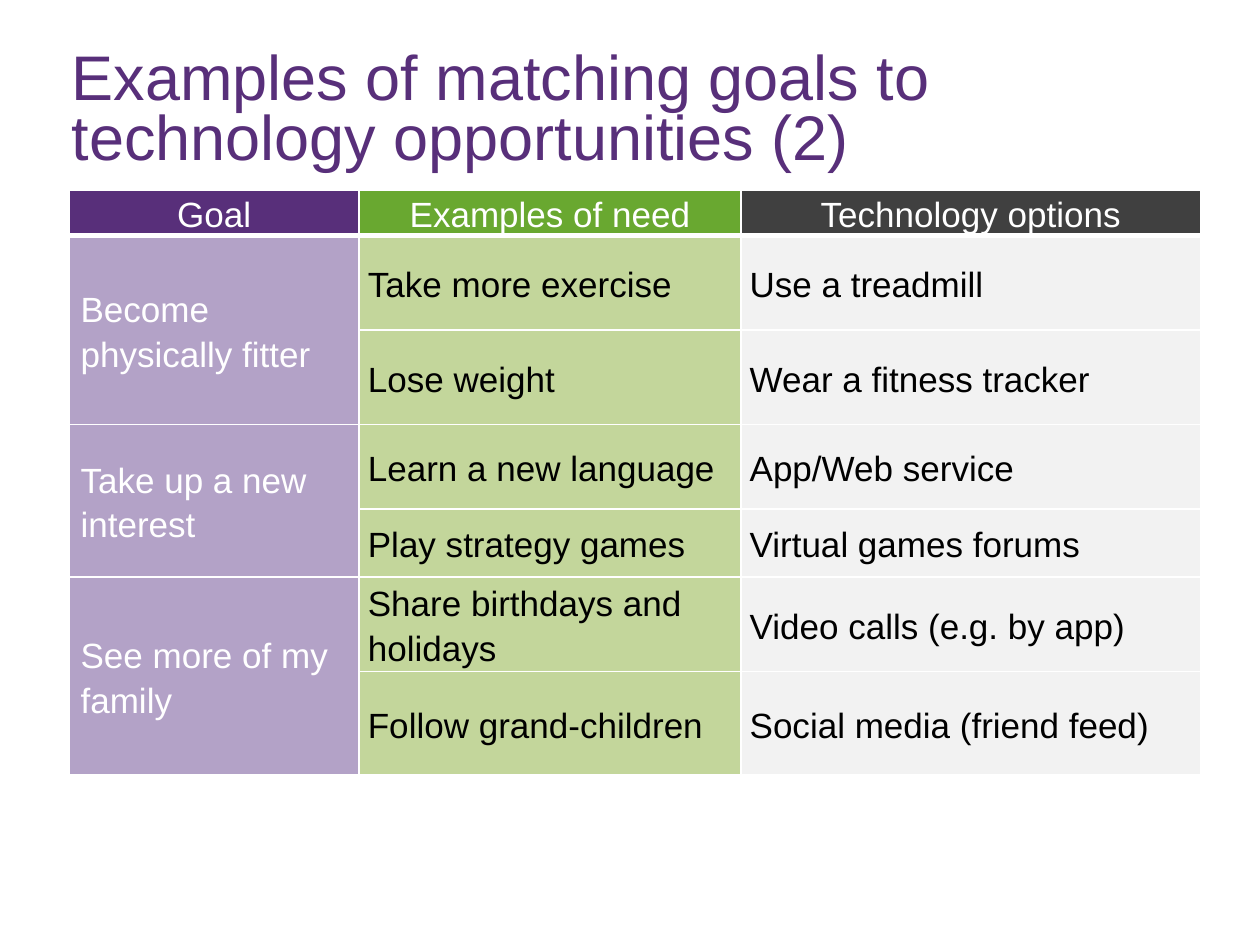
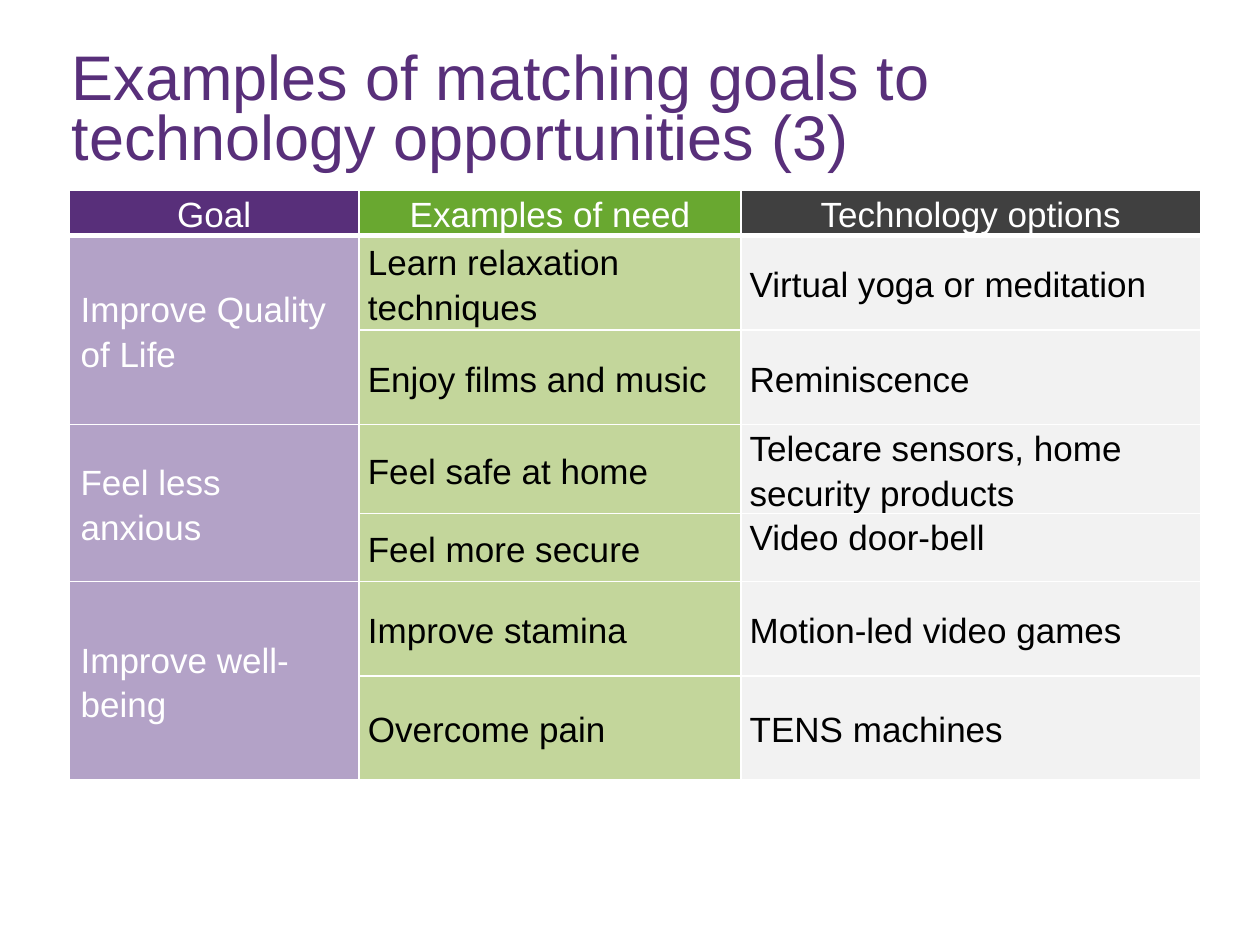
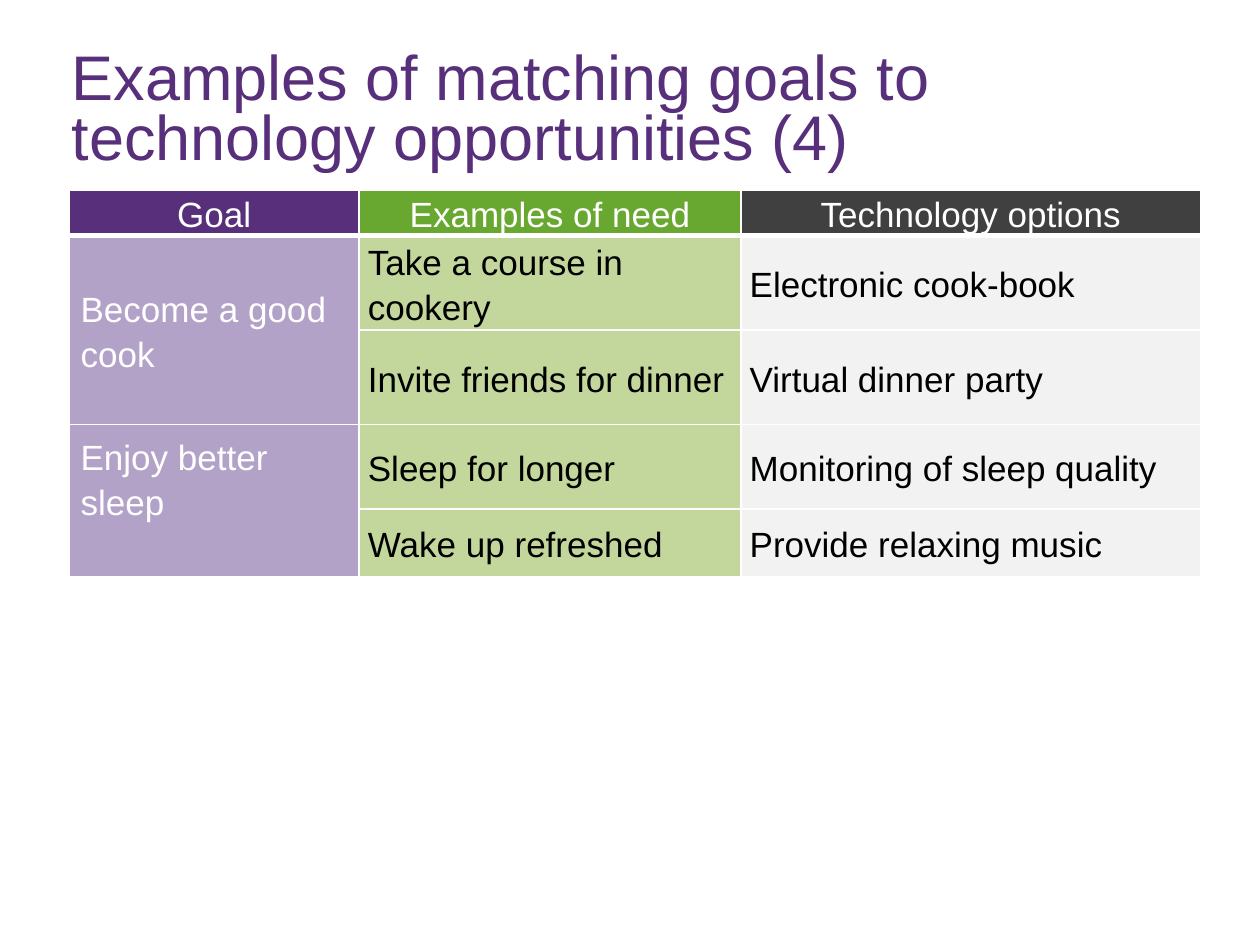
from dataclasses import dataclass
from typing import Any

from lxml import etree
from pptx import Presentation
from pptx import util as u
from pptx.dml import color
from pptx.enum import text
from pptx.oxml import ns

PURPLE, LILAC = "582F7A", "B3A2C7"
WHITE, BLACK = "FFFFFF", "000000"
HEADERS = ["Goal", "Examples of need", "Technology options"]
HEADER_FILLS = [PURPLE, "69A830", "404040"]
BODY_FILLS = [LILAC, "C3D69B", "F2F2F2"]
BODY_INKS = [WHITE, BLACK, BLACK]
COLUMN_WIDTHS = [2.3, 3.03, 3.65]
ROW_HEIGHTS = [0.36, 0.75, 0.75, 0.67, 0.54, 0.75, 0.82]

GOAL_SETS = {
    2: [
        ("Become physically fitter",
         [("Take more exercise", "Use a treadmill"),
          ("Lose weight", "Wear a fitness tracker")]),
        ("Take up a new interest",
         [("Learn a new language", "App/Web service"),
          ("Play strategy games", "Virtual games forums")]),
        ("See more of my family",
         [("Share birthdays and holidays", "Video calls (e.g. by app)"),
          ("Follow grand-children", "Social media (friend feed)")]),
    ],
    3: [
        ("Improve Quality of Life",
         [("Learn relaxation techniques", "Virtual yoga or meditation"),
          ("Enjoy films and music", "Reminiscence")]),
        ("Feel less anxious",
         [("Feel safe at home", "Telecare sensors, home security products"),
          ("Feel more secure", "Video door-bell")]),
        ("Improve well-being",
         [("Improve stamina", "Motion-led video games"),
          ("Overcome pain", "TENS machines")]),
    ],
    4: [
        ("Become a good cook",
         [("Take a course in cookery", "Electronic cook-book"),
          ("Invite friends for dinner", "Virtual dinner party")]),
        ("Enjoy better sleep",
         [("Sleep for longer", "Monitoring of sleep quality"),
          ("Wake up refreshed", "Provide relaxing music")]),
    ],
}


def rgb(hex_color):
    return color.RGBColor.from_string(hex_color)


@dataclass
class Deck:
    """Hold the shared style and the current slide."""

    prs: Any
    slide: Any = None
    font: str = "Arial"

    def add_slide(self):
        self.slide = self.prs.slides.add_slide(self.prs.slide_layouts[5])

    def format(self, paragraph, size, ink, spacing, align):
        paragraph.line_spacing = spacing
        paragraph.alignment = align
        for run in paragraph.runs:
            run.font.name = self.font
            run.font.size = u.Pt(size)
            run.font.bold = False
            run.font.color.rgb = rgb(ink)

    def title(self, wording):
        heading = self.slide.shapes.title
        heading.left, heading.top = u.Inches(0.47), u.Inches(0.4)
        heading.width, heading.height = u.Inches(9.06), u.Inches(1.1)
        frame = heading.text_frame
        frame.text = wording
        frame.auto_size = text.MSO_AUTO_SIZE.NONE
        frame.vertical_anchor = text.MSO_ANCHOR.MIDDLE
        frame.margin_bottom = u.Inches(0.17)
        self.format(frame.paragraphs[0], 36, PURPLE, 0.8, text.PP_ALIGN.LEFT)

    def borders(self, cell, top, bottom):
        properties = cell._tc.get_or_add_tcPr()
        for side, width in zip("LRTB", (1, 1, top, bottom)):
            line = etree.SubElement(properties, ns.qn(f"a:ln{side}"), w=str(u.Pt(width)))
            fill = etree.SubElement(line, ns.qn("a:solidFill"))
            etree.SubElement(fill, ns.qn("a:srgbClr"), val=WHITE)

    def cell(self, cell, wording, fill, ink, row):
        is_header = row == 0
        self.borders(cell, 3 if row == 1 else 1, 3 if is_header else 1)
        cell.fill.solid()
        cell.fill.fore_color.rgb = rgb(fill)
        cell.margin_left = cell.margin_right = u.Inches(0.07)
        cell.margin_top = cell.margin_bottom = 0
        cell.vertical_anchor = text.MSO_ANCHOR.TOP if is_header else text.MSO_ANCHOR.MIDDLE
        cell.text = wording
        align = text.PP_ALIGN.CENTER if is_header else text.PP_ALIGN.LEFT
        self.format(cell.text_frame.paragraphs[0], 20, ink, 1.14, align)

    def goal_table(self, goals):
        rows = [HEADERS]
        for goal, matches in goals:
            rows += [(goal if i == 0 else "", *match) for i, match in enumerate(matches)]
        heights = ROW_HEIGHTS[:len(rows)]
        table = self.slide.shapes.add_table(
            len(rows), len(HEADERS), u.Inches(0.55), u.Inches(1.51),
            u.Inches(sum(COLUMN_WIDTHS)), u.Inches(sum(heights))).table
        table.first_row = table.horz_banding = False
        for column, width in zip(table.columns, COLUMN_WIDTHS):
            column.width = u.Inches(width)
        for r, (height, wordings) in enumerate(zip(heights, rows)):
            table.rows[r].height = u.Inches(height)
            fills = BODY_FILLS if r else HEADER_FILLS
            inks = BODY_INKS if r else [WHITE] * len(HEADERS)
            for c, wording in enumerate(wordings):
                self.cell(table.cell(r, c), wording, fills[c], inks[c], r)
        for r in range(1, len(rows), 2):
            goal_cell = table.cell(r, 0)
            goal_cell.merge(table.cell(r + 1, 0))
            indent = goal_cell.text_frame.paragraphs[0]._p.get_or_add_pPr()
            indent.set("marL", str(u.Inches(0.02)))
        return table


def main():
    prs = Presentation()
    prs.slide_width, prs.slide_height = u.Inches(10), u.Inches(7.5)
    deck = Deck(prs)
    tables = {}
    for number, goals in GOAL_SETS.items():
        deck.add_slide()
        deck.title(f"Examples of matching goals to technology opportunities ({number})")
        tables[number] = deck.goal_table(goals)
    tables[3].cell(4, 2).vertical_anchor = text.MSO_ANCHOR.TOP
    tables[4].cell(3, 0).margin_bottom = u.Inches(0.36)
    prs.save("out.pptx")


if __name__ == "__main__":
    main()
